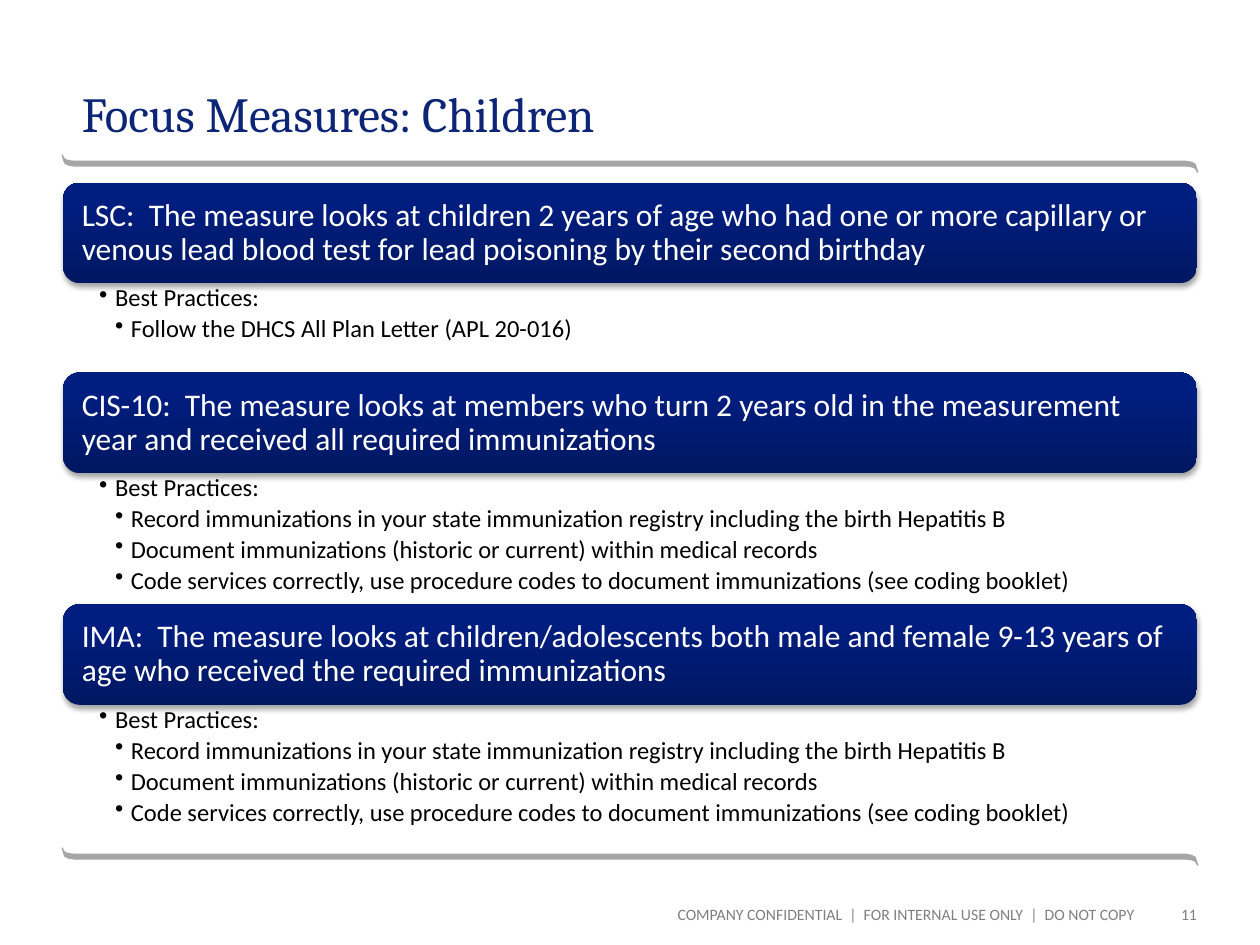
from copy import deepcopy
from dataclasses import dataclass

from lxml import etree
from pptx import Presentation
from pptx import util as u
from pptx.dml.color import RGBColor
from pptx.enum import shapes, text
from pptx.oxml import parse_xml
from pptx.oxml.ns import nsdecls, qn

Cm, Pt = u.Cm, u.Pt

LEFT, WIDTH = 1.27, 22.86
CENTER = 12.7
BANNER_TOP, BANNER_HEIGHT = 3.68, 2.03
INDENT = 0.32
BANNER_STOPS = [(0, "001762"), (0.8, "001E7F"), (1, "001E80")]

# Half the rule's outline, in cm from its centre; the rest is this half turned around.
RULE_HALF = [(-11.46, -0.18), (-11.43, -0.18), (-11.41, -0.13), (-11.37, -0.09),
             (-11.3, -0.07), (-11.2, -0.06), (11.2, -0.06), (11.32, -0.04),
             (11.4, 0), (11.43, 0.08)]

IMMUNIZATION_PRACTICES = [
    "Record immunizations in your state immunization registry including the birth Hepatitis B",
    "Document immunizations (historic or current) within medical records",
    "Code services correctly, use procedure codes to document immunizations (see coding booklet)",
]


@dataclass
class Measure:
    description: str
    practices: list[str]
    practices_height: float


@dataclass
class Label:
    words: str
    box: tuple[float, float, float, float]
    font: str
    size: float
    color: str
    align: text.PP_ALIGN
    anchor: text.MSO_ANCHOR
    insets: tuple[float, float, float, float] = (0, 0, 0, 0)


MEASURES = [
    Measure("LSC:  The measure looks at children 2 years of age who had one or more capillary "
            "or venous lead blood test for lead poisoning by their second birthday",
            ["Follow the DHCS All Plan Letter (APL 20-016)"], 1.8),
    Measure("CIS-10:  The measure looks at members who turn 2 years old in the measurement year "
            "and received all required immunizations", IMMUNIZATION_PRACTICES, 2.64),
    Measure("IMA:  The measure looks at children/adolescents both male and female 9-13 years of "
            "age who received the required immunizations", IMMUNIZATION_PRACTICES, 2.64),
]

LABELS = [
    Label("Focus Measures: Children", (LEFT, 0.2, WIDTH, 2.8), "Cambria", 28, "0C2577",
          text.PP_ALIGN.LEFT, text.MSO_ANCHOR.BOTTOM, (0.38, 0.13, 0.25, 0.13)),
    Label("COMPANY CONFIDENTIAL  |  FOR INTERNAL USE ONLY  |  DO NOT COPY",
          (8.69, 18.24, 14.17, 0.38), "Calibri", 9, "808080",
          text.PP_ALIGN.RIGHT, text.MSO_ANCHOR.MIDDLE),
    Label("11", (23.06, 18.24, 1.07, 0.38), "Calibri", 9, "808080",
          text.PP_ALIGN.RIGHT, text.MSO_ANCHOR.MIDDLE),
]


def rgb(value: str) -> RGBColor:
    return RGBColor.from_string(value)


def set_frame(frame, insets, anchor) -> None:
    frame.word_wrap = True
    frame.vertical_anchor = anchor
    (frame.margin_left, frame.margin_top,
     frame.margin_right, frame.margin_bottom) = map(Cm, insets)


def set_font(paragraph, name: str, size: float, color: str) -> None:
    paragraph.font.name = name
    paragraph.font.size = Pt(size)
    paragraph.font.color.rgb = rgb(color)


def add_rule(slide, center_y: float) -> None:
    outline = RULE_HALF + [(-x, -y) for x, y in RULE_HALF]
    points = [(Cm(CENTER + x), Cm(center_y + y)) for x, y in outline]
    builder = slide.shapes.build_freeform(*points[0])
    builder.add_line_segments(points[1:], close=True)
    shape = builder.convert_to_shape()
    shape.shadow.inherit = False
    shape.fill.solid()
    shape.fill.fore_color.rgb = rgb("A6A6A6")
    shape.line.fill.background()


def add_label(slide, label: Label) -> None:
    frame = slide.shapes.add_textbox(*map(Cm, label.box)).text_frame
    set_frame(frame, label.insets, label.anchor)
    paragraph = frame.paragraphs[0]
    paragraph.text = label.words
    paragraph.alignment = label.align
    set_font(paragraph, label.font, label.size, label.color)


def fill_gradient(shape) -> None:
    """Fill from the bottom up through BANNER_STOPS."""
    shape.fill.gradient()
    shape.fill.gradient_angle = 90
    stop_list = shape.element.spPr.find(".//" + qn("a:gsLst"))
    stop_list.append(deepcopy(stop_list[-1]))
    for stop, (position, color) in zip(shape.fill.gradient_stops, BANNER_STOPS):
        stop.position = position
        stop.color.rgb = rgb(color)


def add_drop_shadow(shape) -> None:
    shape.shadow.inherit = False
    effects = shape.element.spPr.find(qn("a:effectLst"))
    effects.append(parse_xml(
        f'<a:outerShdw {nsdecls("a")} blurRad="{Pt(3.1)}" dist="{Pt(1.8)}" dir="5400000" '
        'rotWithShape="0"><a:srgbClr val="000000"><a:alpha val="35000"/></a:srgbClr>'
        '</a:outerShdw>'))


def add_banner(slide, top: float, words: str) -> None:
    shape = slide.shapes.add_shape(shapes.MSO_SHAPE.ROUNDED_RECTANGLE,
                                   Cm(LEFT), Cm(top), Cm(WIDTH), Cm(BANNER_HEIGHT))
    fill_gradient(shape)
    shape.line.fill.background()
    add_drop_shadow(shape)
    set_frame(shape.text_frame, (0.28, 0.18, 0.28, 0.18), text.MSO_ANCHOR.MIDDLE)
    paragraph = shape.text_frame.paragraphs[0]
    paragraph.text = words
    paragraph.alignment = text.PP_ALIGN.LEFT
    paragraph.line_spacing = 0.9
    set_font(paragraph, "Calibri", 18, "FFFFFF")


def add_bullet(paragraph, level: int) -> None:
    properties = paragraph._p.get_or_add_pPr()
    properties.set("marL", str(Cm(INDENT * level)))
    properties.set("indent", str(Cm(-INDENT)))
    etree.SubElement(properties, qn("a:buChar"), char="•")
    paragraph.level = level


def add_practices(slide, top: float, measure: Measure) -> None:
    box = slide.shapes.add_textbox(Cm(LEFT), Cm(top), Cm(WIDTH), Cm(measure.practices_height))
    frame = box.text_frame
    set_frame(frame, (0.73, 0.05, 0.28, 0.05), text.MSO_ANCHOR.TOP)
    for index, words in enumerate(["Best Practices:", *measure.practices]):
        paragraph = frame.add_paragraph() if index else frame.paragraphs[0]
        paragraph.text = words
        add_bullet(paragraph, 2 if index else 1)
        paragraph.line_spacing = 0.9
        paragraph.space_after = Pt(2.5)
        set_font(paragraph, "Calibri", 14, "000000")


def main() -> None:
    presentation = Presentation()
    presentation.slide_width, presentation.slide_height = Cm(25.4), Cm(19.05)
    slide = presentation.slides.add_slide(presentation.slide_layouts[6])
    for center_y in (3.3, 17.27):
        add_rule(slide, center_y)
    for label in LABELS:
        add_label(slide, label)
    top = BANNER_TOP
    for measure in MEASURES:
        add_banner(slide, top, measure.description)
        top += BANNER_HEIGHT
        add_practices(slide, top, measure)
        top += measure.practices_height
    presentation.save("out.pptx")


if __name__ == "__main__":
    main()
